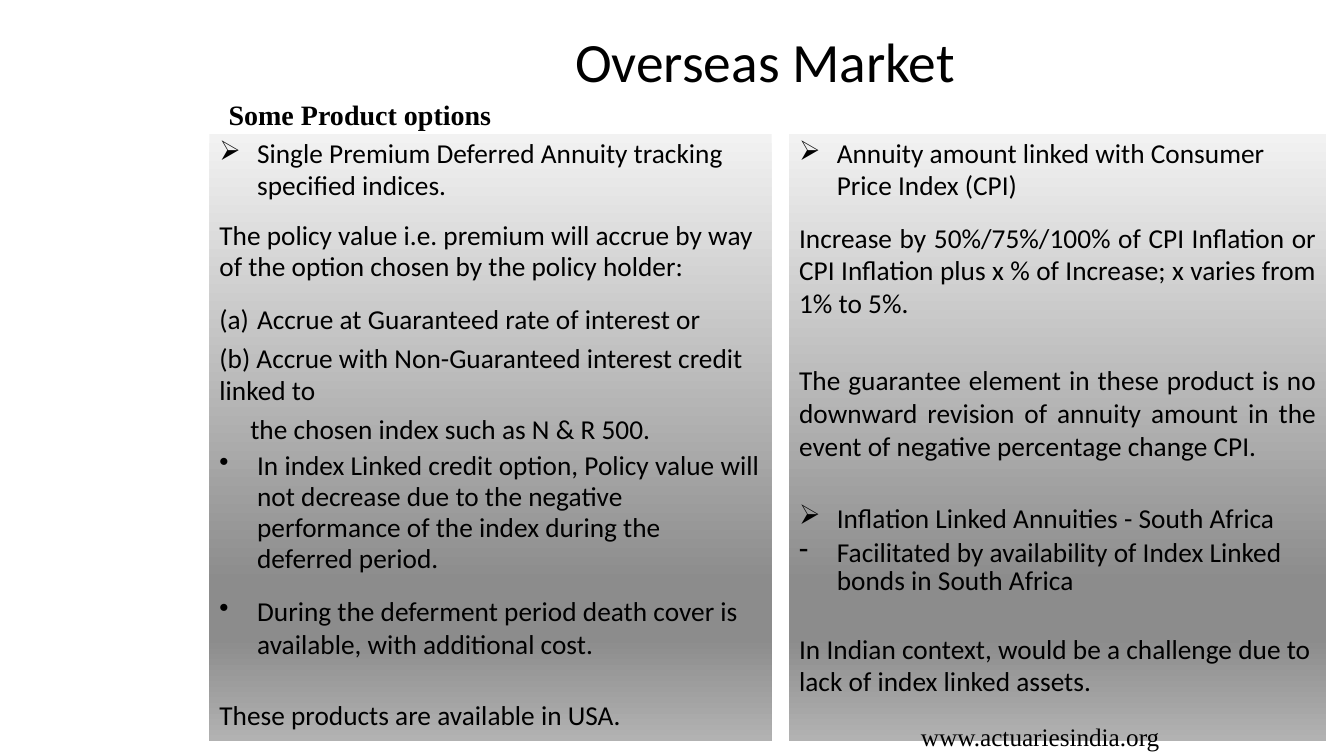
from pptx import Presentation
from pptx.dml.color import RGBColor
from pptx.enum.shapes import MSO_SHAPE as Shape
from pptx.enum.text import MSO_ANCHOR as Anchor, MSO_AUTO_SIZE as Fit, PP_ALIGN as Align
from pptx.oxml import parse_xml
from pptx.oxml.ns import nsdecls
from pptx.util import Cm, Pt

STOPS = [(0, "F2F2F2"), (74, "8C8C8C"), (83, "8C8C8C"), (100, "B2B2B2")]
ARROW, DOT, DASH, ALPHA = "➢", "•", "-", "(a)"
GAP = 3.9
LINE = 27.5


def color(code):
    return RGBColor.from_string(code)


class Deck:
    sans = "Calibri"
    serif = "Times New Roman"
    ink = "000000"
    size = 19.5
    hang = Cm(0.95)

    def __init__(self):
        self.prs = Presentation()
        self.prs.slide_width = Cm(33.87)
        self.prs.slide_height = Cm(19.05)
        self.slide = self.prs.slides.add_slide(self.prs.slide_layouts[5])

    def add_text(self, par, text, size, face, bold=False):
        run = par.add_run()
        run.text = text
        font = run.font
        font.name, font.size, font.bold = face, Pt(size), bold
        font.color.rgb = color(self.ink)

    def title(self, text, x, y, w, h):
        box = self.slide.shapes.title
        box.left, box.top, box.width, box.height = Cm(x), Cm(y), Cm(w), Cm(h)
        frame = box.text_frame
        frame.auto_size = Fit.NONE
        frame.vertical_anchor = Anchor.MIDDLE
        par = frame.paragraphs[0]
        par.alignment = Align.CENTER
        self.add_text(par, text, 39.6, self.sans)

    def label(self, text, x, y, w, h, size, bold=False):
        box = self.slide.shapes.add_textbox(Cm(x), Cm(y), Cm(w), Cm(h))
        box.text_frame.word_wrap = True
        self.add_text(box.text_frame.paragraphs[0], text, size, self.serif, bold)

    def mark(self, par, sign):
        props = par._p.get_or_add_pPr()
        props.set("marL", str(self.hang))
        props.set("indent", str(-self.hang))
        if sign == ALPHA:
            tag = 'buAutoNum {} type="alphaLcParenBoth"'
        else:
            tag = 'buChar {} char="' + sign + '"'
        props.append(parse_xml("<a:" + tag.format(nsdecls("a")) + "/>"))

    def panel(self, items, x, y, w, h):
        box = self.slide.shapes.add_shape(Shape.RECTANGLE, Cm(x), Cm(y), Cm(w), Cm(h))
        box.shadow.inherit = False
        box.line.fill.background()
        stops = "".join(
            f'<a:gs pos="{pos * 1000}"><a:srgbClr val="{code}"/></a:gs>'
            for pos, code in STOPS
        )
        box._element.spPr.insert(2, parse_xml(
            f'<a:gradFill {nsdecls("a")} rotWithShape="1"><a:gsLst>{stops}</a:gsLst>'
            '<a:lin ang="5400000" scaled="0"/></a:gradFill>'
        ))
        frame = box.text_frame
        frame.word_wrap = True
        frame.vertical_anchor = Anchor.TOP
        for num, (text, look) in enumerate(items):
            par = frame.add_paragraph() if num else frame.paragraphs[0]
            par.alignment = look.get("align", Align.LEFT)
            par.line_spacing = look.get("lead", 1.0)
            par.space_before = Pt(look.get("before", GAP) if num else 0)
            par.space_after = Pt(look.get("after", 0))
            if "sign" in look:
                self.mark(par, look["sign"])
            elif "left" in look:
                par._p.get_or_add_pPr().set("marL", str(Cm(look["left"])))
            self.add_text(par, text, self.size, self.sans)


def main():
    deck = Deck()
    deck.title("Overseas Market", 4.8, 0.86, 28.96, 1.32)

    loose = {"lead": 0.95, "after": 10}
    tight = {"lead": 0.87}
    just = {"align": Align.JUSTIFY}

    growth = [
        ("Single Premium Deferred Annuity tracking specified indices.",
         {**loose, "sign": ARROW}),
        ("The policy value i.e. premium will accrue by way of the option "
         "chosen by the policy holder:", loose),
        ("Accrue at Guaranteed rate of interest or", {"sign": ALPHA}),
        ("(b) Accrue with Non-Guaranteed interest credit linked to", {}),
        ("the chosen index such as N & R 500.", {"left": 0.78}),
        ("In index Linked credit option, Policy value will not decrease due to "
         "the negative performance of the index during the deferred period.",
         {**loose, "sign": DOT}),
        ("During the deferment period death cover is available, with "
         "additional cost.", {"sign": DOT}),
        ("These products are available in USA.", {"before": LINE}),
    ]
    prices = [
        ("Annuity amount linked with Consumer Price Index (CPI)",
         {**loose, "sign": ARROW}),
        ("Increase by 50%/75%/100% of CPI Inflation or CPI Inflation plus x % "
         "of Increase; x varies from 1% to 5%.", just),
        ("The guarantee element in these product is no downward revision of "
         "annuity amount in the event of negative percentage change CPI.",
         {**just, "before": GAP + LINE}),
        ("Inflation Linked Annuities - South Africa",
         {**tight, "sign": ARROW, "before": GAP + LINE}),
        ("Facilitated by availability of Index Linked bonds in South Africa",
         {**tight, "sign": DASH}),
        ("In Indian context, would be a challenge due to lack of index linked "
         "assets.", {**loose, "before": LINE}),
    ]
    deck.panel(growth, 5.28, 3.38, 14.17, 15.29)
    deck.panel(prices, 19.89, 3.38, 13.54, 15.29)

    deck.label("Some Product options", 5.51, 2.34, 10.57, 1.12, 20, True)
    deck.label("www.actuariesindia.org", 22.96, 18.06, 8.05, 1.02, 18)
    deck.prs.save("out.pptx")


if __name__ == "__main__":
    main()
